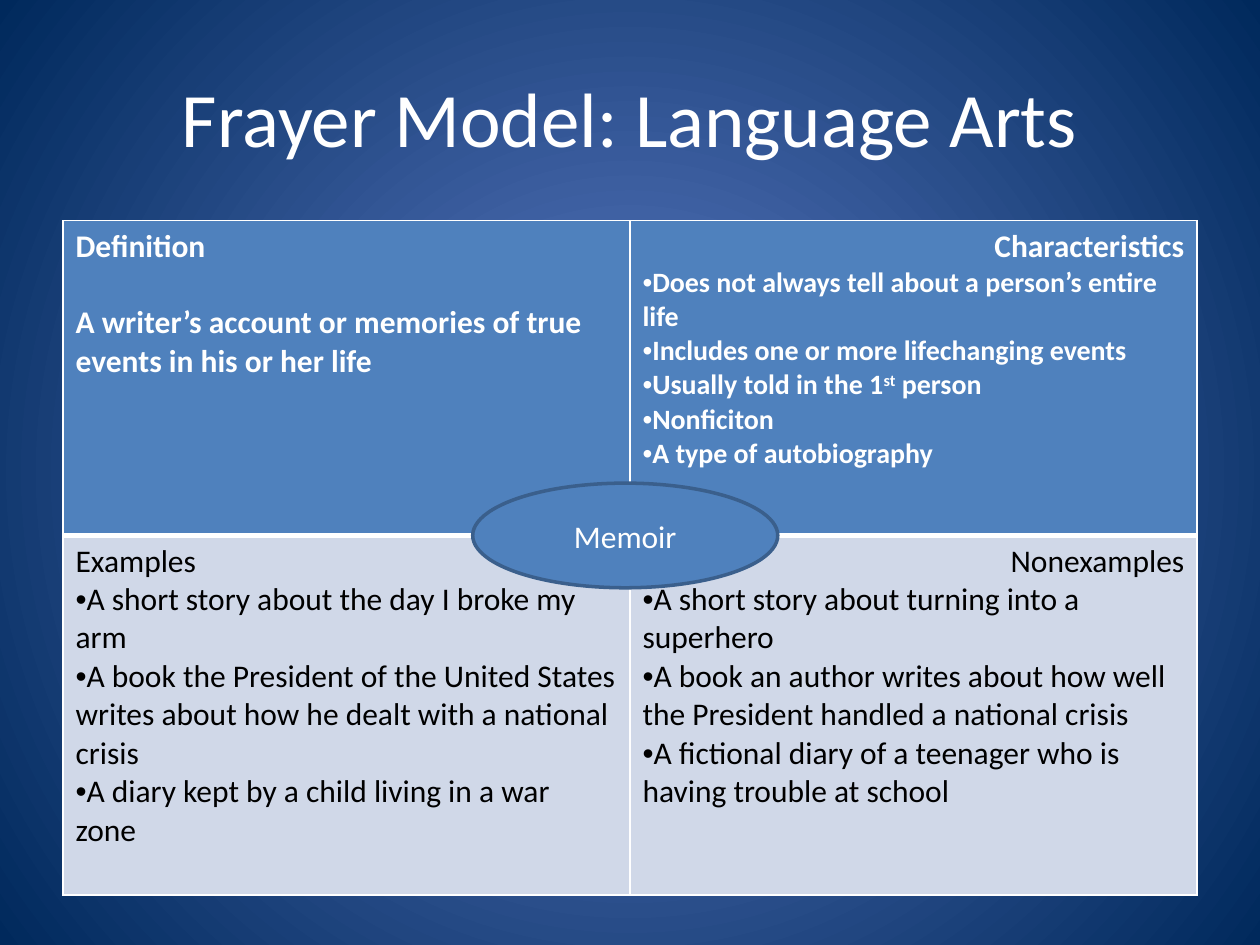
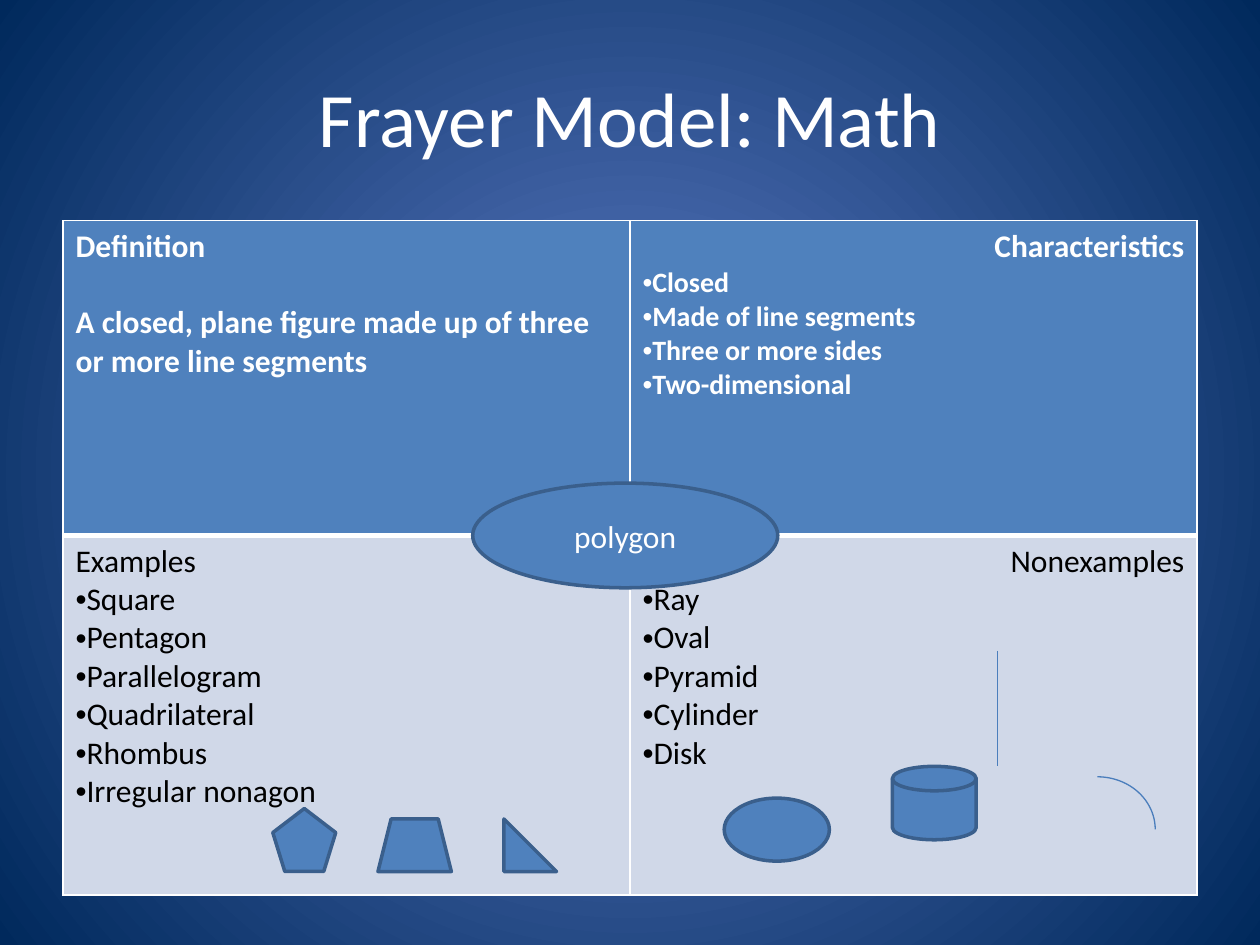
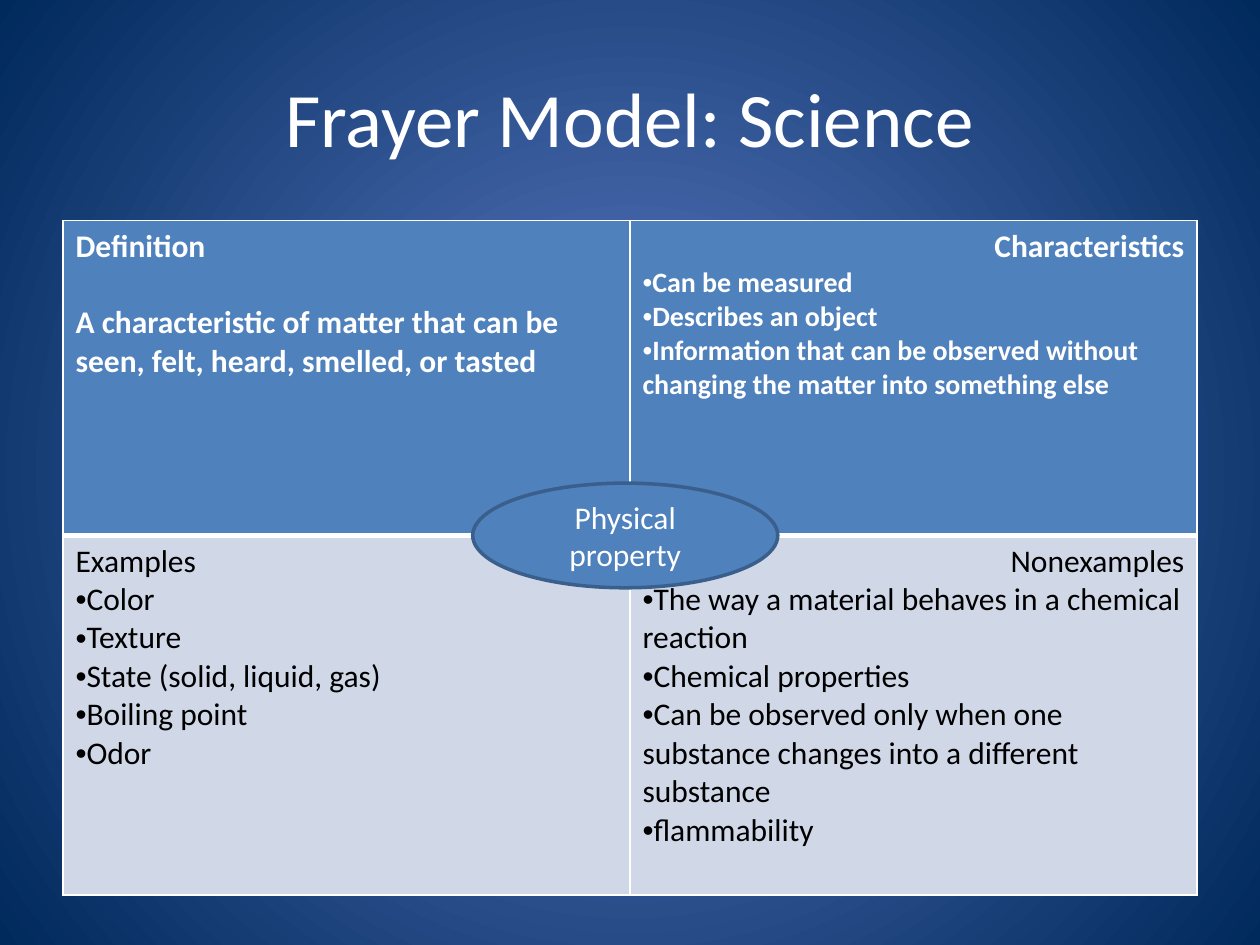
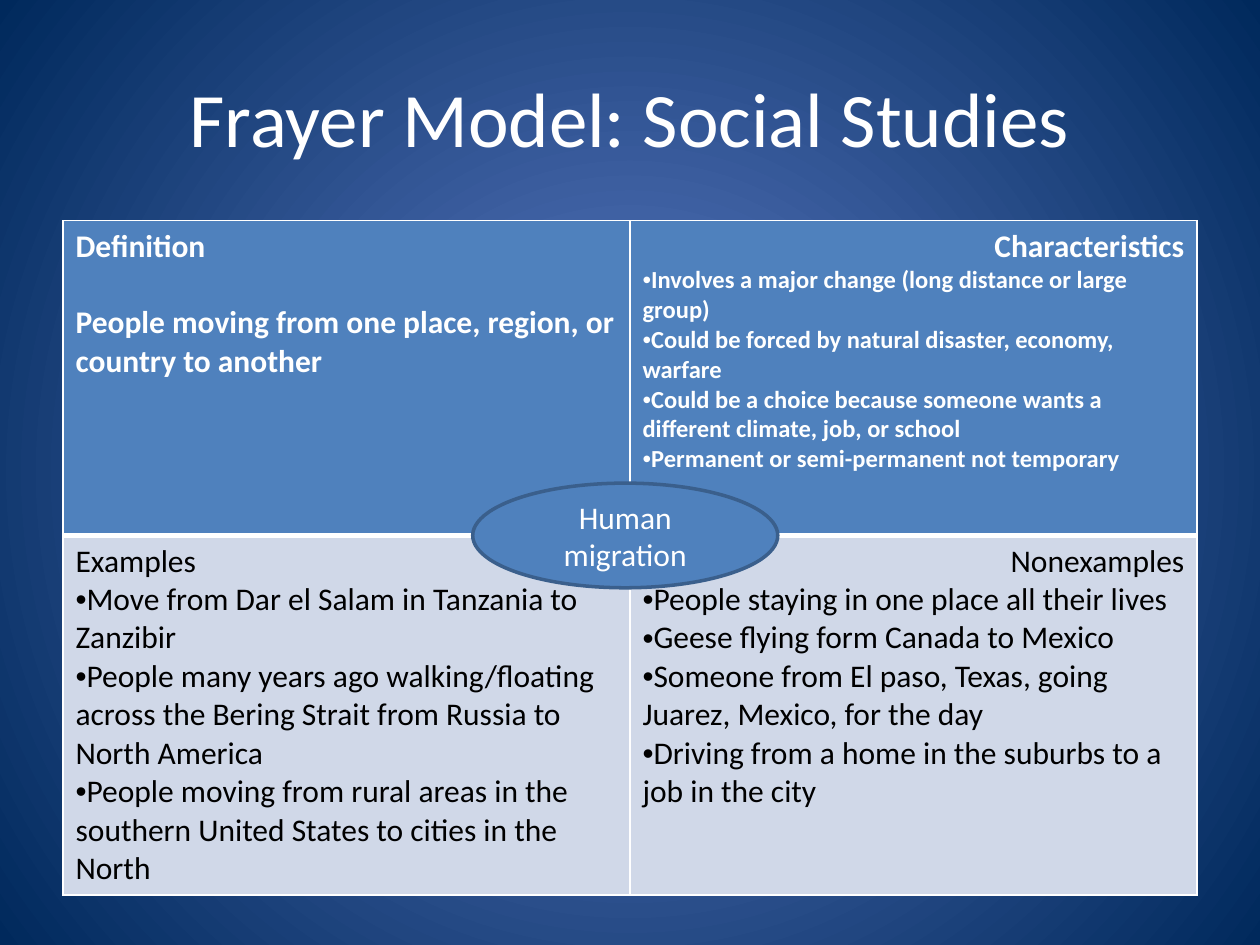
"""Build four Frayer Model slides, one for each school subject."""
from dataclasses import dataclass

from lxml.etree import SubElement
from pptx import Presentation
from pptx.dml.color import RGBColor
from pptx.enum.shapes import MSO_CONNECTOR, MSO_SHAPE
from pptx.enum.text import MSO_ANCHOR, PP_ALIGN
from pptx.oxml import parse_xml
from pptx.oxml.ns import nsdecls, qn
from pptx.util import Cm, Pt


@dataclass(frozen=True)
class Theme:
    font: str = "Calibri"
    white: str = "FFFFFF"
    black: str = "000000"
    blue: str = "4F81BD"
    outline: str = "3A5F8C"
    thin_line: str = "4B7EBC"
    pale: str = "D0D8E8"
    glow: str = "5E7CC5"
    night: str = "00295C"
    title_size: int = 44
    body_size: int = 18
    list_size: int = 16
    small_list_size: int = 14


theme = Theme()

subjects = [
    {
        "name": "Language Arts",
        "term": "Memoir",
        "list_size": theme.list_size,
        "Definition": ["A writer’s account or memories of true events in his or her life"],
        "Characteristics": [
            "Does not always tell about a person’s entire life",
            "Includes one or more lifechanging events",
            "Usually told in the 1^st^ person",
            "Nonficiton",
            "A type of autobiography",
        ],
        "Examples": [
            "A short story about the day I broke my arm",
            "A book the President of the United States writes about how he dealt with a national crisis",
            "A diary kept by a child living in a war zone",
        ],
        "Nonexamples": [
            "A short story about turning into a superhero",
            "A book an author writes about how well the President handled a national crisis",
            "A fictional diary of a teenager who is having trouble at school",
        ],
    },
    {
        "name": "Math",
        "term": "polygon",
        "list_size": theme.list_size,
        "Definition": ["A closed, plane figure made up of three or more line segments"],
        "Characteristics": ["Closed", "Made of line segments", "Three or more sides", "Two-dimensional"],
        "Examples": ["Square", "Pentagon", "Parallelogram", "Quadrilateral", "Rhombus", "Irregular nonagon"],
        "Nonexamples": ["Ray", "Oval", "Pyramid", "Cylinder", "Disk"],
    },
    {
        "name": "Science",
        "term": "Physical property",
        "list_size": theme.list_size,
        "Definition": ["A characteristic of matter that can be seen, felt, heard, smelled, or tasted"],
        "Characteristics": [
            "Can be measured",
            "Describes an object",
            "Information that can be observed without changing the matter into something else",
        ],
        "Examples": ["Color", "Texture", "State (solid, liquid, gas)", "Boiling point", "Odor"],
        "Nonexamples": [
            "The way a material behaves in a chemical reaction",
            "Chemical properties",
            "Can be observed only when one substance changes into a different substance",
            "flammability",
        ],
    },
    {
        "name": "Social Studies",
        "term": "Human migration",
        "list_size": theme.small_list_size,
        "Definition": ["People moving from one place, region, or country to another"],
        "Characteristics": [
            "Involves a major change (long distance or large group)",
            "Could be forced by natural disaster, economy, warfare",
            "Could be a choice because someone wants a different climate, job, or school",
            "Permanent or semi-permanent not temporary",
        ],
        "Examples": [
            "Move from Dar el Salam in Tanzania to Zanzibir",
            "People many years ago walking/floating across the Bering Strait from Russia to North America",
            "People moving from rural areas in the southern United States to cities in the North",
        ],
        "Nonexamples": [
            "People staying in one place all their lives",
            "Geese flying form Canada to Mexico",
            "Someone from El paso, Texas, going Juarez, Mexico, for the day",
            "Driving from a home in the suburbs to a job in the city",
        ],
    },
]

quadrants = [["Definition", "Characteristics"], ["Examples", "Nonexamples"]]
row_styles = [
    {"fill": theme.blue, "ink": theme.white, "bold": True, "borders": {"L": 1, "R": 1, "T": 1, "B": 3}},
    {"fill": theme.pale, "ink": theme.black, "bold": False, "borders": {"L": 1, "R": 1, "T": 3, "B": 1}},
]
figures = [
    (MSO_SHAPE.RIGHT_TRIANGLE, 10.16, 16.51, 1.06, 1.06),
    (MSO_SHAPE.TRAPEZOID, 7.62, 16.51, 1.48, 1.06),
    (MSO_SHAPE.REGULAR_PENTAGON, 5.5, 16.3, 1.27, 1.27),
    (MSO_SHAPE.OVAL, 14.6, 16.09, 2.12, 1.27),
    (MSO_SHAPE.FLOWCHART_MAGNETIC_DISK, 17.99, 15.45, 1.69, 1.48),
]


def write_text(para, text, size, color, bold=False, align=PP_ALIGN.LEFT):
    para.alignment = align
    for index, piece in enumerate(text.split("^")):
        span = para.add_run()
        span.text = piece
        span.font.name = theme.font
        span.font.size = Pt(size)
        span.font.bold = bold
        span.font.color.rgb = RGBColor.from_string(color)
        if index % 2:
            span._r.get_or_add_rPr().set("baseline", "30000")


def add_figure(page, kind, left, top, width, height):
    figure = page.shapes.add_shape(kind, Cm(left), Cm(top), Cm(width), Cm(height))
    figure.shadow.inherit = False
    figure.fill.solid()
    figure.fill.fore_color.rgb = RGBColor.from_string(theme.blue)
    figure.line.color.rgb = RGBColor.from_string(theme.outline)
    figure.line.width = Pt(2)
    return figure


deck = Presentation()
deck.slide_width = Cm(25.4)
deck.slide_height = Cm(19.05)

backdrop = deck.slide_master.background.fill
backdrop.gradient()
for stop, color in zip(backdrop.gradient_stops, (theme.glow, theme.night)):
    stop.color.rgb = RGBColor.from_string(color)
linear = next(deck.slide_master.element.iter(qn("a:lin")))
linear.getparent().replace(linear, parse_xml(
    f'<a:path {nsdecls("a")} path="circle">'
    '<a:fillToRect l="50000" t="50000" r="50000" b="50000"/></a:path>'
))

for subject in subjects:
    page = deck.slides.add_slide(deck.slide_layouts[6])

    title = page.shapes.add_textbox(Cm(1.27), Cm(0.76), Cm(22.86), Cm(3.18)).text_frame
    title.word_wrap = True
    title.vertical_anchor = MSO_ANCHOR.MIDDLE
    write_text(title.paragraphs[0], f"Frayer Model: {subject['name']}",
               theme.title_size, theme.white, align=PP_ALIGN.CENTER)

    table = page.shapes.add_table(2, 2, Cm(1.27), Cm(4.45), Cm(22.86), Cm(13.59)).table
    table.first_row = False
    table.horz_banding = False
    table.rows[0].height = Cm(6.35)
    table.rows[1].height = Cm(7.24)

    for row, (headings, style) in enumerate(zip(quadrants, row_styles)):
        for column, heading in enumerate(headings):
            cell = table.cell(row, column)
            cell.fill.solid()
            cell.fill.fore_color.rgb = RGBColor.from_string(style["fill"])
            properties = cell._tc.get_or_add_tcPr()
            for position, (side, width) in enumerate(style["borders"].items()):
                properties.insert(position, parse_xml(
                    f'<a:ln{side} {nsdecls("a")} w="{Pt(width)}"><a:solidFill>'
                    f'<a:srgbClr val="{theme.white}"/></a:solidFill></a:ln{side}>'
                ))

            align = PP_ALIGN.RIGHT if column else PP_ALIGN.LEFT
            write_text(cell.text_frame.paragraphs[0], heading,
                       theme.body_size, style["ink"], style["bold"], align)
            size = subject["list_size"] if heading == "Characteristics" else theme.body_size
            for entry in subject[heading]:
                para = cell.text_frame.add_paragraph()
                write_text(para, entry, size, style["ink"], style["bold"])
                if heading == "Definition":
                    para.space_before = Pt(22)
                else:
                    bullet = para._p.get_or_add_pPr()
                    SubElement(bullet, qn("a:buFont"), typeface="Arial")
                    SubElement(bullet, qn("a:buChar"), char="•")

    term = add_figure(page, MSO_SHAPE.OVAL, 9.53, 9.74, 6.15, 2.11).text_frame
    term.word_wrap = True
    term.vertical_anchor = MSO_ANCHOR.MIDDLE
    write_text(term.paragraphs[0], subject["term"], theme.body_size, theme.white, align=PP_ALIGN.CENTER)

    if subject["name"] == "Math":
        for figure in figures:
            add_figure(page, *figure)

        arc = add_figure(page, MSO_SHAPE.ARC, 20.96, 15.66, 2.33, 2.12)
        arc.fill.background()
        segment = page.shapes.add_connector(MSO_CONNECTOR.STRAIGHT, Cm(20.11), Cm(13.12), Cm(20.11), Cm(15.45))
        SubElement(segment._element.spPr, qn("a:effectLst"))
        for stroke in (arc, segment):
            stroke.line.color.rgb = RGBColor.from_string(theme.thin_line)
            stroke.line.width = Pt(0.75)

deck.save("out.pptx")
